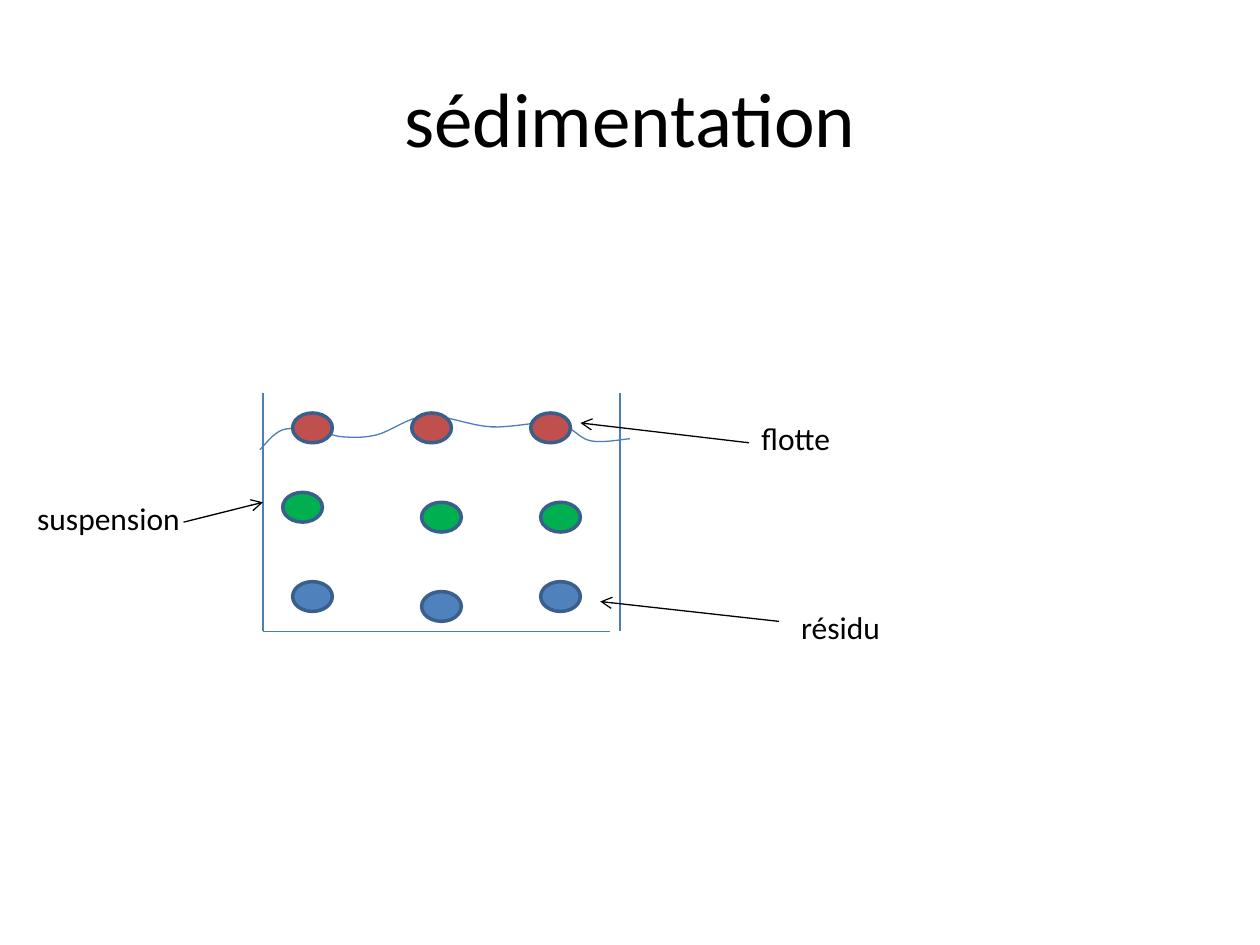
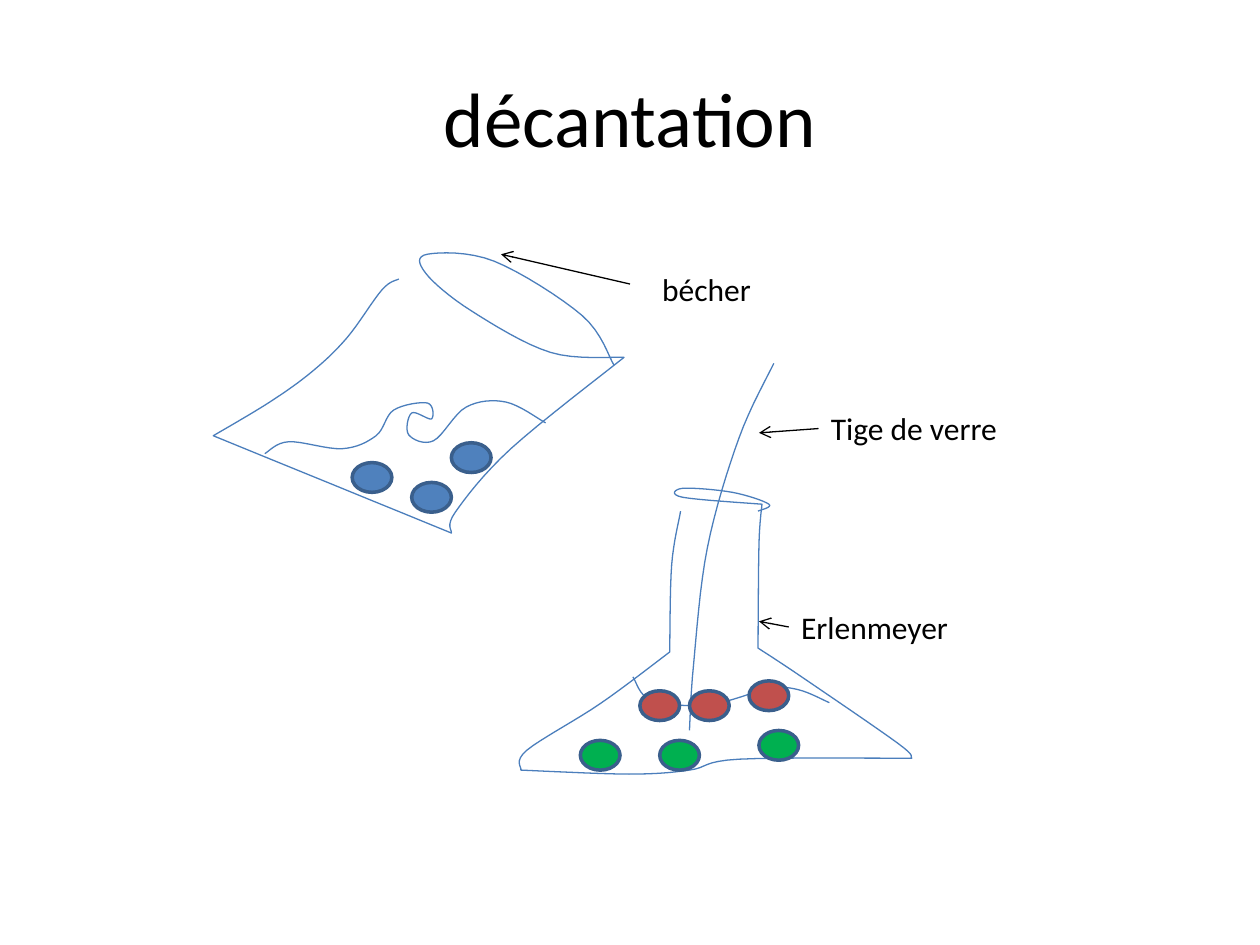
import pptx
import pptx.util
import pptx.dml.color
import pptx.enum.shapes
import pptx.enum.text
import pptx.oxml
import pptx.oxml.ns

RGB = pptx.dml.color.RGBColor
BLACK = RGB(0x00, 0x00, 0x00)
GLASS = RGB(0x4B, 0x7E, 0xBC)
EDGE = RGB(0x3A, 0x5F, 0x8C)
BLUE = RGB(0x4F, 0x81, 0xBD)
RED = RGB(0xC0, 0x50, 0x4D)
GREEN = RGB(0x00, 0xB0, 0x50)
FONT = "Calibri"
CELL = pptx.util.Cm(0.2)
THIN = pptx.util.Pt(0.75)
STEPS = 8

TANK = (26.5, 39.63)
BEAKER = (21.5, 25.63)
FLASK = (52.5, 36.63)


def place(box, spot):
    """Turn a column and row of a box into a place on the slide."""
    return [round((edge + step) * CELL) for edge, step in zip(box, spot)]


def style(para, size):
    """Give a paragraph the shared font."""
    para.font.name = FONT
    para.font.size = pptx.util.Pt(size)
    para.font.color.rgb = BLACK


def blend(a, b, c, d, t):
    """Find the point at share t of a Catmull-Rom curve from b to c."""
    return (2 * b + (c - a) * t + (2 * a - 5 * b + 4 * c - d) * t ** 2
            + (3 * b - a - 3 * c + d) * t ** 3) / 2


def smooth(knots):
    """List the points of a smooth curve through all knots."""
    ends = [knots[0], *knots, knots[-1]]
    dots = [knots[0]]
    for four in zip(ends, ends[1:], ends[2:], ends[3:]):
        for step in range(1, STEPS + 1):
            dots.append([blend(*axis, step / STEPS) for axis in zip(*four)])
    return dots


def sketch(slide, box, *strokes):
    """Draw one open outline from smooth strokes that meet at corners."""
    dots = [place(box, dot) for knots in strokes for dot in smooth(knots)]
    pen = slide.shapes.build_freeform(*dots[0])
    pen.add_line_segments(dots[1:], close=False)
    shape = pen.convert_to_shape()
    shape.shadow.inherit = False
    shape.fill.background()
    shape.line.color.rgb = GLASS
    shape.line.width = THIN


def grains(slide, box, color, spots):
    """Scatter grains of one colour."""
    for spot in spots:
        grain = slide.shapes.add_shape(
            pptx.enum.shapes.MSO_SHAPE.OVAL,
            *place(box, spot), 4 * CELL, 3 * CELL)
        grain.shadow.inherit = False
        grain.fill.solid()
        grain.fill.fore_color.rgb = color
        grain.line.color.rgb = EDGE
        grain.line.width = pptx.util.Pt(2)


def line(slide, box, start, end, color=GLASS, arrow=False):
    """Draw a straight line, with an arrowhead at its end if asked."""
    link = slide.shapes.add_connector(
        pptx.enum.shapes.MSO_CONNECTOR.STRAIGHT,
        *place(box, start), *place(box, end))
    link.line.color.rgb = color
    link.line.width = THIN
    props = link._element.spPr
    space = pptx.oxml.ns.nsdecls("a")
    if arrow:
        props.find(pptx.oxml.ns.qn("a:ln")).append(
            pptx.oxml.parse_xml(f'<a:tailEnd {space} type="arrow"/>'))
    props.append(pptx.oxml.parse_xml(f"<a:effectLst {space}/>"))
    return link


def label(slide, box, text, spot, cols, end, start=None):
    """Write a label and point from it, by default from its left side."""
    rows = 5.13
    note = slide.shapes.add_textbox(
        *place(box, spot), cols * CELL, round(rows * CELL))
    frame = note.text_frame
    frame.word_wrap = True
    frame.auto_size = pptx.enum.text.MSO_AUTO_SIZE.SHAPE_TO_FIT_TEXT
    frame.text = text
    style(frame.paragraphs[0], 18)
    side = (spot[0], spot[1] + rows / 2)
    link = line(slide, box, start or side, end, BLACK, True)
    if start is None:
        link.begin_connect(note, 1)


def page(deck, text):
    """Add a slide with the shared title."""
    slide = deck.slides.add_slide(deck.slide_layouts[5])
    wide, high = deck.slide_width, deck.slide_height
    title = slide.shapes.title
    title.left, title.top = round(wide * 0.05), round(high * 0.04)
    title.width, title.height = round(wide * 0.9), round(high / 6)
    title.text_frame.text = text
    title.text_frame.vertical_anchor = pptx.enum.text.MSO_ANCHOR.MIDDLE
    para = title.text_frame.paragraphs[0]
    para.alignment = pptx.enum.text.PP_ALIGN.CENTER
    style(para, 44)
    return slide


def tank(slide, box):
    """Draw the tank with three layers of grains."""
    wide, deep = 36, 24
    for col in (0, wide):
        line(slide, box, (col, 0), (col, deep))
    line(slide, box, (0, deep), (wide - 1, deep))
    wave = [(-0.3, 5.7), (2, 3.7), (5.5, 3.8), (8, 4.4), (11.5, 4.2),
            (16.5, 2.3), (23, 3.4), (29.5, 3), (33, 4.8), (37, 4.6)]
    sketch(slide, box, wave)
    grains(slide, box, BLUE, [(3, 19), (16, 20), (28, 19)])
    grains(slide, box, RED, [(col, 2) for col in range(3, 28, 12)])
    grains(slide, box, GREEN, [(2, 10), (16, 11), (28, 11)])
    label(slide, box, "flotte", (49, 2), 22, (32, 3), (49, 5))
    label(slide, box, "suspension", (-24, 10), 18, (0, 11), (-8, 13))
    label(slide, box, "résidu", (53, 21), 28, (34, 21), (52, 23))


def beaker(slide, box):
    """Draw the tilted beaker and what stays in it."""
    heel, toe, spout = (0, 18.3), (24, 28.1), (41.4, 10.4)
    back = [(18.7, 2.5), (17, 3.6), (13.5, 8.4), (10, 11.8),
            (5.7, 14.9), heel]
    base = [heel, toe]
    front = [toe, (24.4, 26), (30, 19.6), spout]
    rim = [spout, (34, 9.9), (26, 5.7), (21.4, 1.9), (21.6, 0),
           (28.3, 0.7), (37.2, 6.2), (40.4, 11.2)]
    sketch(slide, box, back, base, front, rim)
    swirl = [(5.2, 20.1), (7.6, 18.9), (13, 19.6), (16.4, 18.3),
             (18.2, 15.7), (21.6, 15), (22, 16.6), (20, 16),
             (19.7, 18.2), (22.2, 18.8), (25.5, 15.4), (29.5, 14.9),
             (33.5, 17)]
    sketch(slide, box, swirl)
    grains(slide, box, BLUE, [(14, 21), (20, 23), (24, 19)])
    label(slide, box, "bécher", (44, 1), 18, (29, 0), (42, 3))


def flask(slide, box):
    """Draw the flask, the glass rod and the poured grains."""
    left, right = (15, 29.1), (23.9, 28.7)
    heel, toe, lip = (0, 41), (39.4, 39.8), (24.3, 14.2)
    neck = [(16.1, 14.9), (15.2, 20.3), left]
    slope = [left, (8, 34.3), (0.6, 39), heel]
    base = [heel, (10.9, 41.4), (17, 41), (22, 39.9), toe]
    rise = [toe, (38, 38.3), (28, 31.4), right]
    throat = [right, (24, 18.2), lip]
    rim = [lip, (16.3, 13.5), (16.3, 12.6), (21.3, 13), (25, 14.2),
           (23.9, 14.9)]
    sketch(slide, box, neck, slope, base, rise, throat, rim)
    level = [(11.3, 31.6), (13.2, 34), (19, 34.4), (25, 32.8),
             (28, 32.9), (31.1, 34.2)]
    rod = [(17, 37), (17.4, 30.5), (18.8, 18.6), (22, 7.5), (25.5, 0)]
    sketch(slide, box, level)
    sketch(slide, box, rod)
    grains(slide, box, RED, [(12, 33), (17, 33), (23, 32)])
    grains(slide, box, GREEN, [(24, 37), (14, 38), (6, 38)])
    label(slide, box, "Erlenmeyer", (27, 24), 18, (24, 26))
    label(slide, box, "Tige de verre", (30, 4), 24, (24, 7))


def main():
    """Build both slides and save them."""
    deck = pptx.Presentation()
    deck.slide_width = pptx.util.Inches(10)
    deck.slide_height = pptx.util.Inches(7.5)
    tank(page(deck, "sédimentation"), TANK)
    slide = page(deck, "décantation")
    beaker(slide, BEAKER)
    flask(slide, FLASK)
    deck.save("out.pptx")


if __name__ == "__main__":
    main()
